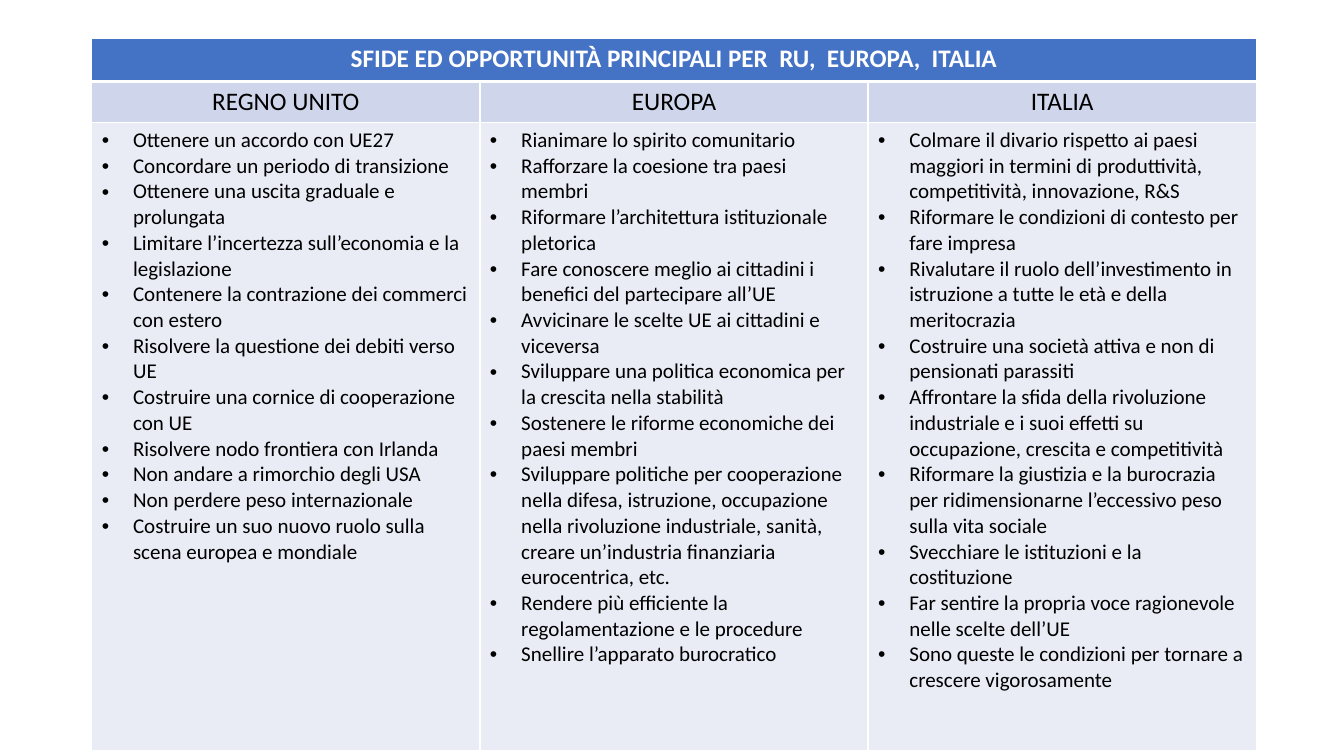
from dataclasses import dataclass

from lxml.etree import SubElement
from pptx import Presentation
from pptx.dml.color import RGBColor as Rgb
from pptx.enum.text import PP_ALIGN as Align
from pptx.oxml.ns import qn
from pptx.util import Inches, Pt

TITLE = "SFIDE ED OPPORTUNITÀ PRINCIPALI PER  RU,  EUROPA,  ITALIA"
CHALLENGES = {
    "REGNO UNITO": [
        "Ottenere un accordo con UE27",
        "Concordare un periodo di transizione",
        "Ottenere una uscita graduale e prolungata",
        "Limitare l’incertezza sull’economia e la legislazione",
        "Contenere la contrazione dei commerci con estero",
        "Risolvere la questione dei debiti verso UE",
        "Costruire una cornice di cooperazione con UE",
        "Risolvere nodo frontiera con Irlanda",
        "Non andare a rimorchio degli USA",
        "Non perdere peso internazionale",
        "Costruire un suo nuovo ruolo sulla scena europea e mondiale",
    ],
    "EUROPA": [
        "Rianimare lo spirito comunitario",
        "Rafforzare la coesione tra paesi membri",
        "Riformare l’architettura istituzionale pletorica",
        "Fare conoscere meglio ai cittadini i benefici del partecipare all’UE",
        "Avvicinare le scelte UE ai cittadini e viceversa",
        "Sviluppare una politica economica per la crescita nella stabilità",
        "Sostenere le riforme economiche dei paesi membri",
        "Sviluppare politiche per cooperazione nella difesa, istruzione, "
        "occupazione nella rivoluzione industriale, sanità, "
        "creare un’industria finanziaria eurocentrica, etc.",
        "Rendere più efficiente la regolamentazione e le procedure",
        "Snellire l’apparato burocratico",
    ],
    "ITALIA": [
        "Colmare il divario rispetto ai paesi maggiori in termini di "
        "produttività, competitività, innovazione, R&S",
        "Riformare le condizioni di contesto per fare impresa",
        "Rivalutare il ruolo dell’investimento in istruzione a tutte le età "
        "e della meritocrazia",
        "Costruire una società attiva e non di pensionati parassiti",
        "Affrontare la sfida della rivoluzione industriale e i suoi effetti "
        "su occupazione, crescita e competitività",
        "Riformare la giustizia e la burocrazia per ridimensionarne "
        "l’eccessivo peso sulla vita sociale",
        "Svecchiare le istituzioni e la costituzione",
        "Far sentire la propria voce ragionevole nelle scelte dell’UE",
        "Sono queste le condizioni per tornare a crescere vigorosamente",
    ],
}


@dataclass(frozen=True)
class Theme:
    font: str = "Calibri"
    heading_size: int = 18
    item_size: int = 15
    title_text: str = "FFFFFF"
    text: str = "000000"
    rule: str = "FFFFFF"
    row_fills: tuple = ("4472C4", "CFD5EA", "E9EBF5")


THEME = Theme()
SLIDE_SIZE = Inches(13.33), Inches(7.5)
TABLE_LEFT, TABLE_TOP, TABLE_WIDTH = Inches(0.91), Inches(0.38), Inches(11.55)
ROW_HEIGHTS = [Inches(height) for height in (0.43, 0.39, 6.23)]
BULLET_INDENT = Inches(0.31)
THIN, THICK = Pt(1), Pt(3)


def add_bullet(paragraph):
    properties = paragraph._p.get_or_add_pPr()
    properties.set("marL", str(BULLET_INDENT))
    properties.set("indent", str(-BULLET_INDENT))
    SubElement(properties, qn("a:buFont"), typeface="Arial")
    SubElement(properties, qn("a:buChar"), char="•")


def add_borders(cell, row):
    """Rule all four sides, thicker between the title and the headings."""
    widths = {"L": THIN, "R": THIN,
              "T": THICK if row == 1 else THIN,
              "B": THICK if row == 0 else THIN}
    properties = cell._tc.get_or_add_tcPr()
    for position, (side, width) in enumerate(widths.items()):
        line = SubElement(properties, qn(f"a:ln{side}"), w=str(width))
        fill = SubElement(line, qn("a:solidFill"))
        SubElement(fill, qn("a:srgbClr"), val=THEME.rule)
        properties.insert(position, line)  # borders come before the fill


def write_cell(cell, lines, row):
    is_title, is_list = row == 0, row == 2
    cell.text = "\n".join(lines)
    for paragraph in cell.text_frame.paragraphs:
        font = paragraph.font
        font.name = THEME.font
        font.size = Pt(THEME.item_size if is_list else THEME.heading_size)
        font.bold = is_title
        font.color.rgb = Rgb.from_string(
            THEME.title_text if is_title else THEME.text)
        paragraph.alignment = Align.LEFT if is_list else Align.CENTER
        if is_list:
            add_bullet(paragraph)


def main():
    deck = Presentation()
    deck.slide_width, deck.slide_height = SLIDE_SIZE
    slide = deck.slides.add_slide(deck.slide_layouts[6])

    table = slide.shapes.add_table(
        len(ROW_HEIGHTS), len(CHALLENGES),
        TABLE_LEFT, TABLE_TOP, TABLE_WIDTH, sum(ROW_HEIGHTS)).table
    for table_row, height in zip(table.rows, ROW_HEIGHTS):
        table_row.height = height

    for row, fill in enumerate(THEME.row_fills):
        for cell in table.rows[row].cells:
            cell.fill.solid()
            cell.fill.fore_color.rgb = Rgb.from_string(fill)
            add_borders(cell, row)

    table.cell(0, 0).merge(table.cell(0, len(CHALLENGES) - 1))
    write_cell(table.cell(0, 0), [TITLE], 0)
    for column, (region, items) in enumerate(CHALLENGES.items()):
        write_cell(table.cell(1, column), [region], 1)
        write_cell(table.cell(2, column), items, 2)

    deck.save("out.pptx")


if __name__ == "__main__":
    main()
